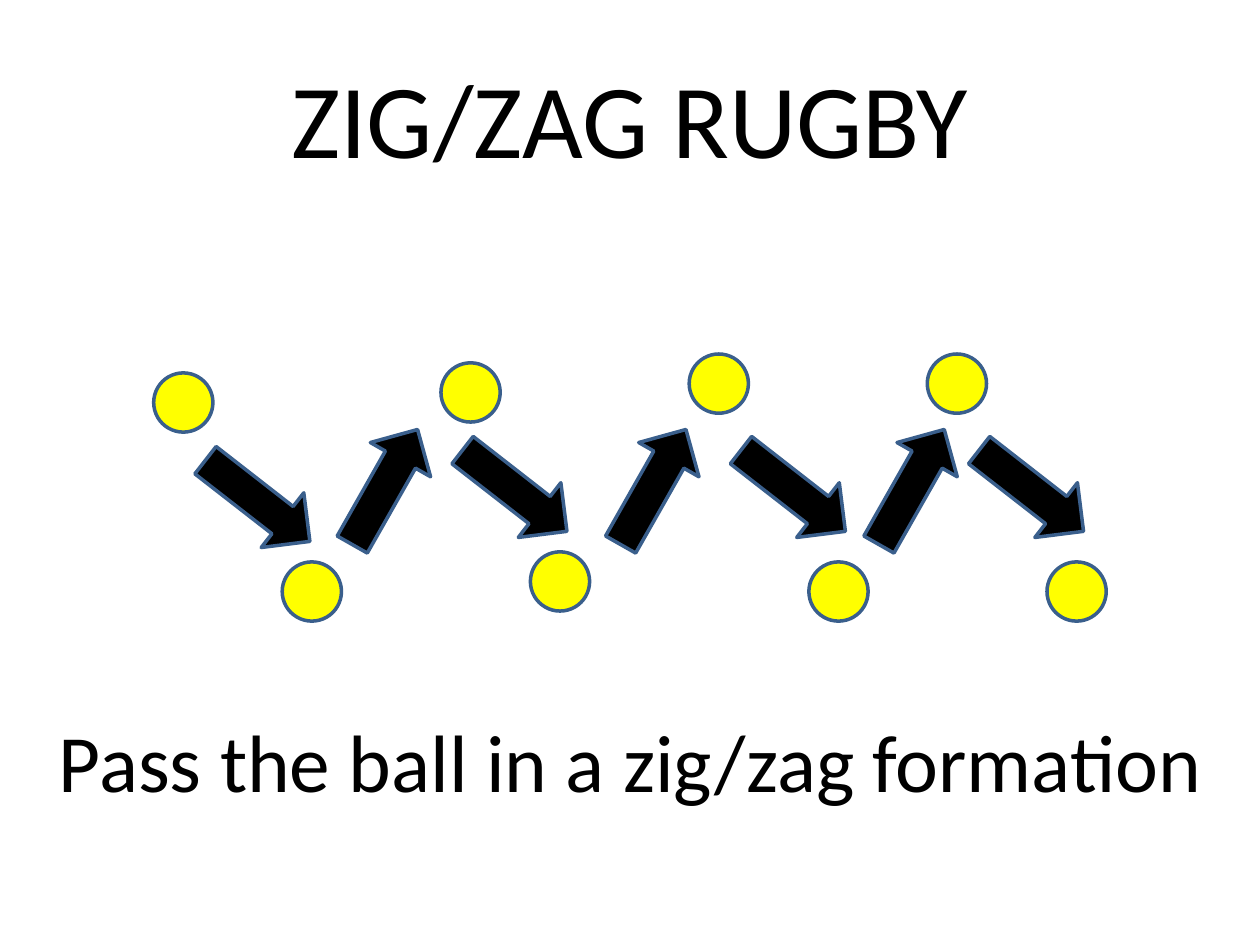
from dataclasses import dataclass
from pptx import Presentation, util as u
from pptx.dml.color import RGBColor
from pptx.enum import shapes, text


@dataclass(frozen=True)
class Theme:
    font: str = "Calibri"
    ink: str = "000000"
    player: str = "FFFF00"
    outline: str = "3A5F8C"
    title_size: float = 60
    caption_size: float = 46.5
    line_width: float = 2


THEME = Theme()
WIDTH, HEIGHT = 10, 7.5

# Content: left and top of each player and each pass, in inches
TITLE = "ZIG/ZAG RUGBY"
CAPTION = "Pass the ball in a zig/zag formation"
PLAYERS = [(1.22, 2.96), (2.24, 4.46), (3.5, 2.88), (4.21, 4.38),
           (5.47, 2.81), (6.42, 4.46), (7.36, 2.81), (8.31, 4.46)]
PASSES = [(1.52, 3.7), (2.53, 3.59), (3.56, 3.62), (4.66, 3.59),
          (5.77, 3.62), (6.71, 3.59), (7.66, 3.62)]
PLAYER_SIZE = (0.47, 0.47)
PASS_SIZE = (1.05, 0.55)
PASS_ANGLES = (37.9, 299.6)  # down, then up, in turn


def place(shape, left, top, width, height):
    shape.left, shape.top = u.Inches(left), u.Inches(top)
    shape.width, shape.height = u.Inches(width), u.Inches(height)


def write(box, words, size, spacing=None):
    frame = box.text_frame
    frame.word_wrap = True
    frame.auto_size = text.MSO_AUTO_SIZE.NONE
    frame.vertical_anchor = text.MSO_ANCHOR.MIDDLE
    frame.text = words
    para = frame.paragraphs[0]
    para.alignment = text.PP_ALIGN.CENTER
    para.line_spacing = spacing
    font = para.runs[0].font
    font.name, font.size = THEME.font, u.Pt(size)
    font.color.rgb = RGBColor.from_string(THEME.ink)


def add_mark(page, kind, position, size, fill, angle=0):
    mark = page.shapes.add_shape(kind, *map(u.Inches, position + size))
    mark.rotation = angle
    mark.shadow.inherit = False
    mark.fill.solid()
    mark.fill.fore_color.rgb = RGBColor.from_string(fill)
    mark.line.color.rgb = RGBColor.from_string(THEME.outline)
    mark.line.width = u.Pt(THEME.line_width)


def main():
    deck = Presentation()
    deck.slide_width, deck.slide_height = u.Inches(WIDTH), u.Inches(HEIGHT)
    page = deck.slides.add_slide(deck.slide_layouts[5])

    # Title and caption
    title = page.shapes.title
    place(title, 0.05 * WIDTH, 0.04 * HEIGHT, 0.9 * WIDTH, HEIGHT / 6)
    write(title, TITLE, THEME.title_size)
    caption = page.shapes.add_textbox(
        0, u.Inches(0.73 * HEIGHT), u.Inches(WIDTH), u.Inches(HEIGHT / 6))
    write(caption, CAPTION, THEME.caption_size, spacing=0.8)

    # Players, with a pass from each one to the next
    for position in PLAYERS:
        add_mark(page, shapes.MSO_SHAPE.OVAL, position, PLAYER_SIZE, THEME.player)
    for index, position in enumerate(PASSES):
        add_mark(page, shapes.MSO_SHAPE.RIGHT_ARROW, position, PASS_SIZE,
                 THEME.ink, PASS_ANGLES[index % 2])

    deck.save("out.pptx")


if __name__ == "__main__":
    main()
